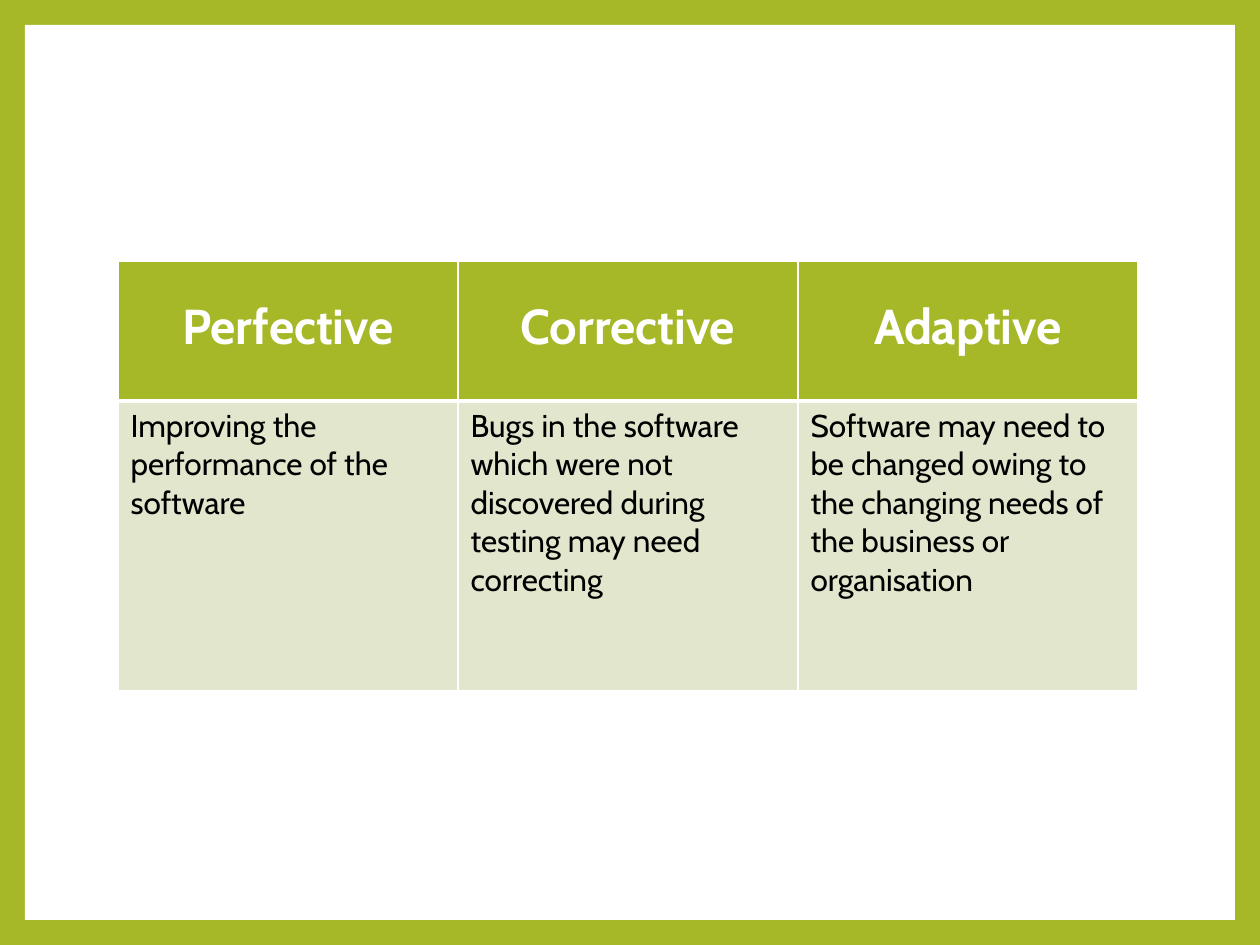
"""Build a slide with a table of the three types of software maintenance."""
from lxml import etree
from pptx import Presentation
from pptx import util as u
from pptx.dml.color import RGBColor
from pptx.enum import shapes, text
from pptx.oxml import ns

MAINTENANCE = [
    ("Perfective", "Improving the performance of the software"),
    ("Corrective", "Bugs in the software which were not discovered during testing may need correcting"),
    ("Adaptive", "Software may need to be changed owing to the changing needs of the business or organisation"),
]
COLORS = {"green": "A6B727", "pale": "E1E6CD", "white": "FFFFFF", "black": "000000"}
FONT = "Cabin"
WIDTH, HEIGHT, FRAME = 1260, 945, 25
TABLE_LEFT, TABLE_TOP, COLUMN_WIDTH = 118, 261, 340
ROWS = [
    {"height": 140, "fill": "green", "color": "white", "size": 28, "bold": True,
     "align": text.PP_ALIGN.CENTER, "margin": 36, "borders": {"L": 1, "R": 1, "T": 1, "B": 3}},
    {"height": 290, "fill": "pale", "color": "black", "size": 18, "bold": False,
     "align": text.PP_ALIGN.LEFT, "margin": 6, "borders": {"L": 1, "R": 1, "T": 3, "B": 1}},
]


def px(length):
    return u.Emu(round(length * 914400 / 126))


def rgb(name):
    return RGBColor.from_string(COLORS[name])


def set_borders(cell, borders):
    properties = cell._tc.get_or_add_tcPr()
    for index, (side, points) in enumerate(borders.items()):
        line = etree.Element(ns.qn(f"a:ln{side}"), w=str(u.Pt(points)))
        fill = etree.SubElement(line, ns.qn("a:solidFill"))
        etree.SubElement(fill, ns.qn("a:srgbClr"), val=COLORS["white"])
        properties.insert(index, line)


def fill_cell(cell, wording, style):
    cell.text = wording
    cell.margin_top = px(style["margin"])
    cell.fill.solid()
    cell.fill.fore_color.rgb = rgb(style["fill"])
    set_borders(cell, style["borders"])
    paragraph = cell.text_frame.paragraphs[0]
    paragraph.alignment = style["align"]
    paragraph.font.name = FONT
    paragraph.font.size = u.Pt(style["size"])
    paragraph.font.bold = style["bold"]
    paragraph.font.color.rgb = rgb(style["color"])


def main():
    presentation = Presentation()
    presentation.slide_width, presentation.slide_height = px(WIDTH), px(HEIGHT)
    slide = presentation.slides.add_slide(presentation.slide_layouts[6])
    slide.background.fill.solid()
    slide.background.fill.fore_color.rgb = rgb("green")

    panel = slide.shapes.add_shape(
        shapes.MSO_SHAPE.RECTANGLE, px(FRAME), px(FRAME),
        px(WIDTH - 2 * FRAME), px(HEIGHT - 2 * FRAME))
    panel.shadow.inherit = False
    panel.fill.solid()
    panel.fill.fore_color.rgb = rgb("white")
    panel.line.fill.background()

    table = slide.shapes.add_table(
        len(ROWS), len(MAINTENANCE), px(TABLE_LEFT), px(TABLE_TOP),
        px(COLUMN_WIDTH * len(MAINTENANCE)), px(sum(row["height"] for row in ROWS))).table
    for row, style in enumerate(ROWS):
        table.rows[row].height = px(style["height"])
        for column, wording in enumerate(MAINTENANCE):
            fill_cell(table.cell(row, column), wording[row], style)
    presentation.save("out.pptx")


if __name__ == "__main__":
    main()
